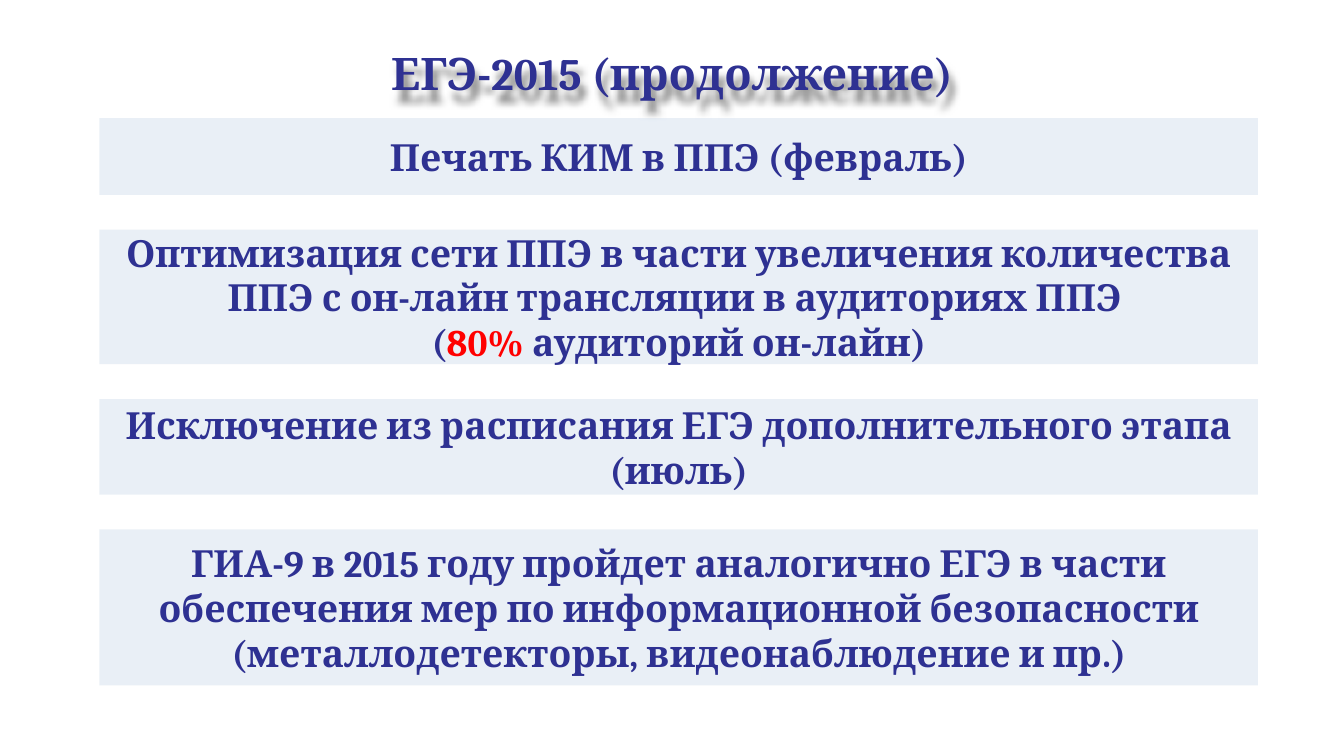
from lxml import etree
from pptx import Presentation
from pptx.dml.color import RGBColor
from pptx.enum.shapes import MSO_SHAPE
from pptx.enum.text import MSO_ANCHOR, MSO_AUTO_SIZE, PP_ALIGN
from pptx.oxml import parse_xml
from pptx.oxml.ns import qn
from pptx.util import Inches, Pt

RECT = MSO_SHAPE.RECTANGLE
MIDDLE = MSO_ANCHOR.MIDDLE
CENTER = PP_ALIGN.CENTER
FIT = MSO_AUTO_SIZE.SHAPE_TO_FIT_TEXT

WIDTH = Inches(10)
HEIGHT = WIDTH * 9 // 16
FONT = "Cambria"
COLORS = {"text": "2E3192", "accent": "FF0000", "band": "B9CDE5"}
OPACITY = 31000
GAP = Inches(0.26)
SHADOW = (
    '<a:effectLst xmlns:a="http://schemas.openxmlformats.org/drawingml/2006/main">'
    '<a:outerShdw blurRad="50800" dist="76200" dir="4200000" algn="t">'
    '<a:srgbClr val="000000"><a:alpha val="50000"/></a:srgbClr>'
    "</a:outerShdw></a:effectLst>"
)

# Each band: height in inches, then paragraphs as lists of (text, color) runs.
BANDS = [
    (0.57, [[("Печать КИМ в ППЭ (февраль)", "text")]]),
    (1.0, [
        [("Оптимизация сети ППЭ в части увеличения количества "
          "ППЭ с он-лайн трансляции в аудиториях ППЭ ", "text")],
        [("(", "text"), ("80%", "accent"), (" аудиторий он-лайн)", "text")],
    ]),
    (0.71, [[("Исключение из расписания ЕГЭ дополнительного этапа (июль)",
              "text")]]),
    (1.16, [[("ГИА-9 в 2015 году пройдет аналогично ЕГЭ в части "
              "обеспечения мер по информационной безопасности "
              "(металлодетекторы, видеонаблюдение и пр.)", "text")]]),
]


def paint(run, size, color):
    font = run.font
    font.name, font.size, font.bold = FONT, Pt(size), True
    font.color.rgb = RGBColor.from_string(COLORS[color])


def add_title(slide, box, text):
    title = slide.shapes.title
    title.left, title.top, title.width, title.height = box
    title.fill.background()
    title.element.spPr.append(parse_xml(SHADOW))
    frame = title.text_frame
    frame.text = text
    frame.word_wrap = True
    frame.auto_size = FIT
    frame.vertical_anchor = MIDDLE
    para = frame.paragraphs[0]
    para.alignment = CENTER
    paint(para.runs[0], 24, "text")


def add_band(slide, box, paras):
    band = slide.shapes.add_shape(RECT, *box)
    band.shadow.inherit = False
    band.line.fill.background()
    band.fill.solid()
    band.fill.fore_color.rgb = RGBColor.from_string(COLORS["band"])
    tint = band.element.spPr.find(qn("a:solidFill"))[0]
    etree.SubElement(tint, qn("a:alpha"), val=str(OPACITY))

    frame = band.text_frame
    frame.word_wrap = True
    frame.vertical_anchor = MIDDLE
    for i, parts in enumerate(paras):
        para = frame.add_paragraph() if i else frame.paragraphs[0]
        para.alignment = CENTER
        for text, color in parts:
            run = para.add_run()
            run.text = text
            paint(run, 20, color)


def add_stack(slide, box, bands):
    """Stack bands downward from the box's top with equal gaps."""
    left, top, width = box
    for size, paras in bands:
        height = Inches(size)
        add_band(slide, (left, top, width, height), paras)
        top += height + GAP


def main():
    deck = Presentation()
    deck.slide_width, deck.slide_height = WIDTH, HEIGHT
    slide = deck.slides.add_slide(deck.slide_layouts[5])
    add_title(slide, (0, Inches(0.29), WIDTH, Inches(0.5)),
              "ЕГЭ-2015 (продолжение)")
    add_stack(slide, (Inches(0.74), Inches(0.88), Inches(8.62)), BANDS)
    deck.save("out.pptx")


if __name__ == "__main__":
    main()
